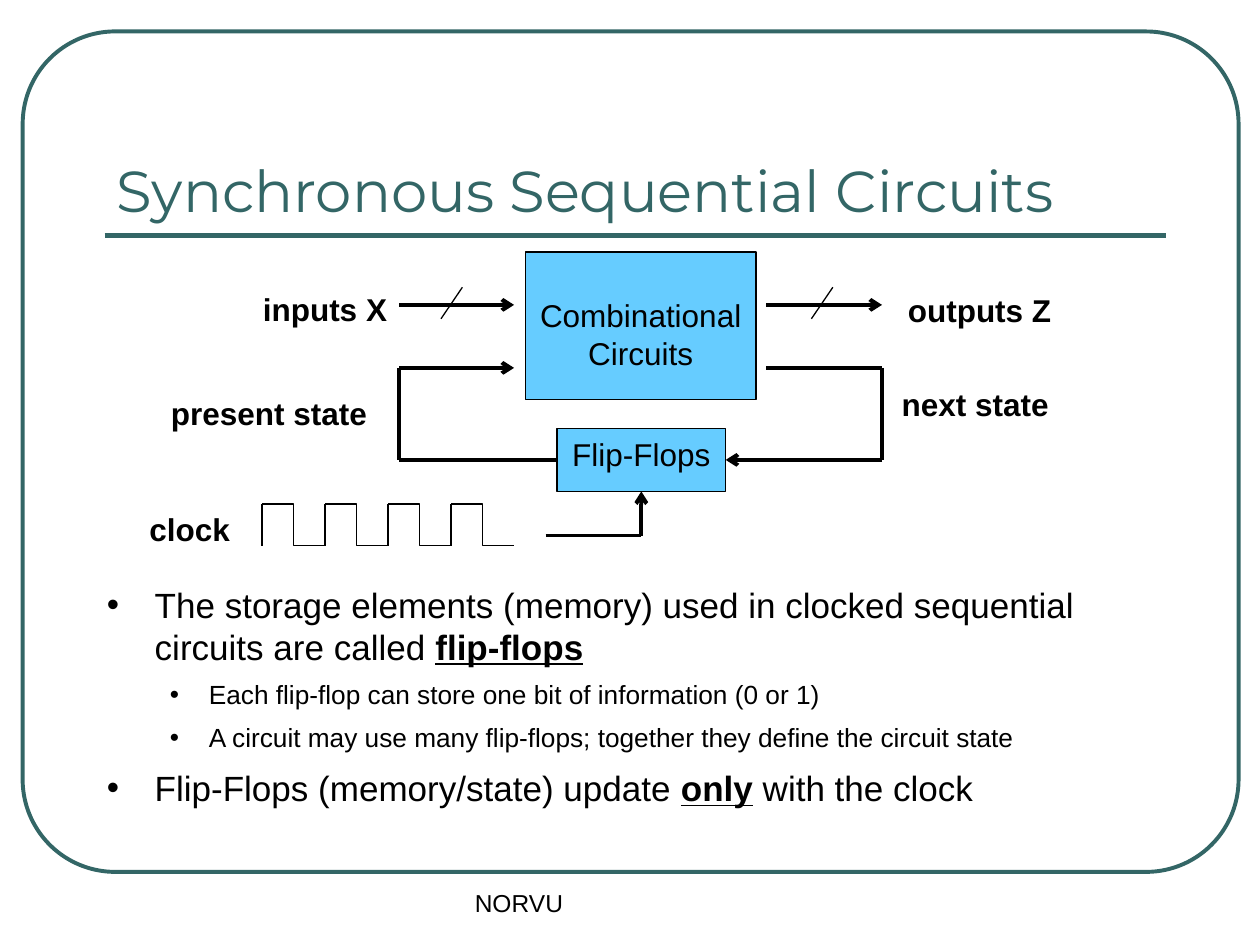
"""Build the slide on synchronous sequential circuits."""
from lxml import etree
from pptx import Presentation
from pptx.dml.color import RGBColor
from pptx.enum.shapes import MSO_CONNECTOR as Connector, MSO_SHAPE as Shape
from pptx.enum.text import MSO_ANCHOR as Anchor, PP_ALIGN as Align
from pptx.oxml.ns import qn
from pptx.util import Inches, Pt

COLORS = {"teal": "336666", "blue": "66CCFF", "black": "000000"}
TITLE = "Synchronous Sequential Circuits"
FOOTER = "NORVU"
LABELS = [
    ("inputs X", (1.98, 2.25, 1.2, 0.4)),
    ("outputs Z", (7.1, 2.26, 1.35, 0.4)),
    ("next state", (7.05, 3.01, 1.38, 0.4)),
    ("present state", (1.25, 3.08, 1.77, 0.4)),
    ("clock", (1.08, 4, 0.85, 0.4)),
]
BULLETS = [
    (0, [("The storage elements (memory) used in clocked sequential circuits are called ", False),
         ("flip-flops", True)]),
    (1, [("Each flip-flop can store one bit of information (0 or 1)", False)]),
    (1, [("A circuit may use many flip-flops; together they define the circuit state", False)]),
    (0, [("Flip-Flops (memory/state) update ", False), ("only", True), (" with the clock", False)]),
]
LEVELS = [
    {"size": 20, "before": 7.8, "margin": 0.38, "hanging": 0.38},
    {"size": 15, "before": 6.5, "margin": 0.81, "hanging": 0.31},
]
LEFT, RIGHT = 3.17, 7
BLOCK_LEFT, BLOCK_RIGHT = 4.08, 6.08
INPUT_Y, STATE_Y, FEEDBACK_Y, CLOCK_Y = 2.42, 2.92, 3.65, 4.25
FLIP_LEFT, FLIP_WIDTH, FLIP_TOP, FLIP_HEIGHT = 4.42, 1.34, 3.4, 0.5
FLIP_RIGHT, FLIP_BOTTOM = FLIP_LEFT + FLIP_WIDTH, FLIP_TOP + FLIP_HEIGHT
FLIP_CENTER = FLIP_LEFT + FLIP_WIDTH / 2
PLAIN_WIRES = [
    ((BLOCK_RIGHT, STATE_Y), (RIGHT, STATE_Y)),
    ((RIGHT, STATE_Y), (RIGHT, FEEDBACK_Y)),
    ((LEFT, FEEDBACK_Y), (LEFT, STATE_Y)),
    ((4.33, CLOCK_Y), (FLIP_CENTER, CLOCK_Y)),
]
ARROWS = [
    ((LEFT, INPUT_Y), (BLOCK_LEFT, INPUT_Y)),
    ((BLOCK_RIGHT, INPUT_Y), (RIGHT, INPUT_Y)),
    ((LEFT, STATE_Y), (BLOCK_LEFT, STATE_Y)),
]
SLASH_LEFTS = [3.5, 6.44]
PULSE_LEFT, PULSE_WIDTH, PULSE_TOP, PULSE_BOTTOM, PULSE_COUNT = 2.08, 0.5, 4, 4.33, 4


def color(name):
    return RGBColor.from_string(COLORS[name])


def set_all(target, values):
    for name, value in values.items():
        setattr(target, name, value)


def add_run(paragraph, text, size, ink="black", **font_values):
    run = paragraph.add_run()
    run.text = text
    set_all(run.font, {"name": "Arial", "size": Pt(size), **font_values})
    run.font.color.rgb = color(ink)


def add_text(slide, box, text, size, ink="black", frame_values=None, align=Align.LEFT, **font_values):
    frame = slide.shapes.add_textbox(*map(Inches, box)).text_frame
    set_all(frame, {"word_wrap": True, **(frame_values or {})})
    paragraph = frame.paragraphs[0]
    paragraph.alignment = align
    add_run(paragraph, text, size, ink, **font_values)


def add_shape(slide, kind, box, line, width, fill=None):
    shape = slide.shapes.add_shape(kind, *map(Inches, box))
    shape.shadow.inherit = False
    if fill:
        shape.fill.solid()
        shape.fill.fore_color.rgb = color(fill)
    else:
        shape.fill.background()
    shape.line.color.rgb = color(line)
    shape.line.width = Pt(width)
    return shape


def add_block(slide, box, lines, top_margin):
    shape = add_shape(slide, Shape.RECTANGLE, box, "black", 0.75, "blue")
    frame = shape.text_frame
    set_all(frame, {"word_wrap": False, "vertical_anchor": Anchor.TOP, "margin_top": Inches(top_margin)})
    for index, text in enumerate(lines):
        paragraph = frame.add_paragraph() if index else frame.paragraphs[0]
        paragraph.alignment = Align.CENTER
        add_run(paragraph, text, 18)
    return shape


def add_line(slide, start, end, width=2.25, ink="black", arrow=False, kind=Connector.STRAIGHT):
    line = slide.shapes.add_connector(kind, *map(Inches, (*start, *end)))
    line.line.color.rgb = color(ink)
    line.line.width = Pt(width)
    if arrow:
        etree.SubElement(line.line._get_or_add_ln(), qn("a:tailEnd"), type="arrow")
    etree.SubElement(line._element.spPr, qn("a:effectLst"))
    return line


def add_bullets(slide, box):
    frame = slide.shapes.add_textbox(*map(Inches, box)).text_frame
    frame.word_wrap = True
    for index, (level, runs) in enumerate(BULLETS):
        style = LEVELS[level]
        paragraph = frame.add_paragraph() if index else frame.paragraphs[0]
        set_all(paragraph, {"level": level, "space_before": Pt(style["before"])})
        properties = paragraph._p.get_or_add_pPr()
        properties.set("marL", str(Inches(style["margin"])))
        properties.set("indent", str(-Inches(style["hanging"])))
        etree.SubElement(properties, qn("a:buFont"), typeface="Arial")
        etree.SubElement(properties, qn("a:buChar"), char="•")
        for text, strong in runs:
            add_run(paragraph, text, style["size"], bold=strong, underline=strong)


def add_diagram(slide):
    add_block(slide, (4.17, 2, 1.83, 1.17), ["Combinational", "Circuits"], 0.35)
    flip_flops = add_block(slide, (FLIP_LEFT, FLIP_TOP, FLIP_WIDTH, FLIP_HEIGHT), ["Flip-Flops"], 0.05)
    for start, end in PLAIN_WIRES:
        add_line(slide, start, end)
    for start, end in ARROWS:
        add_line(slide, start, end, arrow=True)
    present = add_line(slide, (FLIP_LEFT, FEEDBACK_Y), (LEFT, FEEDBACK_Y))
    present.begin_connect(flip_flops, 1)
    following = add_line(slide, (RIGHT, FEEDBACK_Y), (FLIP_RIGHT, FEEDBACK_Y), arrow=True)
    following.end_connect(flip_flops, 3)
    clock = add_line(slide, (FLIP_CENTER, CLOCK_Y), (FLIP_CENTER, FLIP_BOTTOM), arrow=True)
    clock.end_connect(flip_flops, 2)
    for left in SLASH_LEFTS:
        add_line(slide, (left + 0.17, 2.28), (left, 2.53), 0.75)
    for index in range(PULSE_COUNT):
        left = PULSE_LEFT + index * PULSE_WIDTH
        add_line(slide, (left, PULSE_TOP), (left, PULSE_BOTTOM), 0.75)
        add_line(slide, (left, PULSE_TOP), (left + PULSE_WIDTH, PULSE_BOTTOM), 0.75, kind=Connector.ELBOW)
    for text, box in LABELS:
        add_text(slide, box, text, 18, frame_values={"word_wrap": False}, align=Align.CENTER, bold=True)


def main():
    presentation = Presentation()
    set_all(presentation, {"slide_width": Inches(10), "slide_height": Inches(7.5)})
    slide = presentation.slides.add_slide(presentation.slide_layouts[6])
    border = add_shape(slide, Shape.ROUNDED_RECTANGLE, (0.18, 0.25, 9.65, 6.67), "teal", 2.25)
    border.adjustments[0] = 0.11
    add_line(slide, (0.83, 1.87), (9.25, 1.87), 3, "teal")
    add_text(slide, (0.83, 0.58, 8.41, 1.25), TITLE, 33, "teal",
             {"vertical_anchor": Anchor.BOTTOM}, name="Montserrat")
    add_bullets(slide, (0.75, 4.58, 8.66, 2.33))
    add_diagram(slide)
    add_text(slide, (3.67, 7, 3.16, 0.5), FOOTER, 14)
    presentation.save("out.pptx")


if __name__ == "__main__":
    main()
